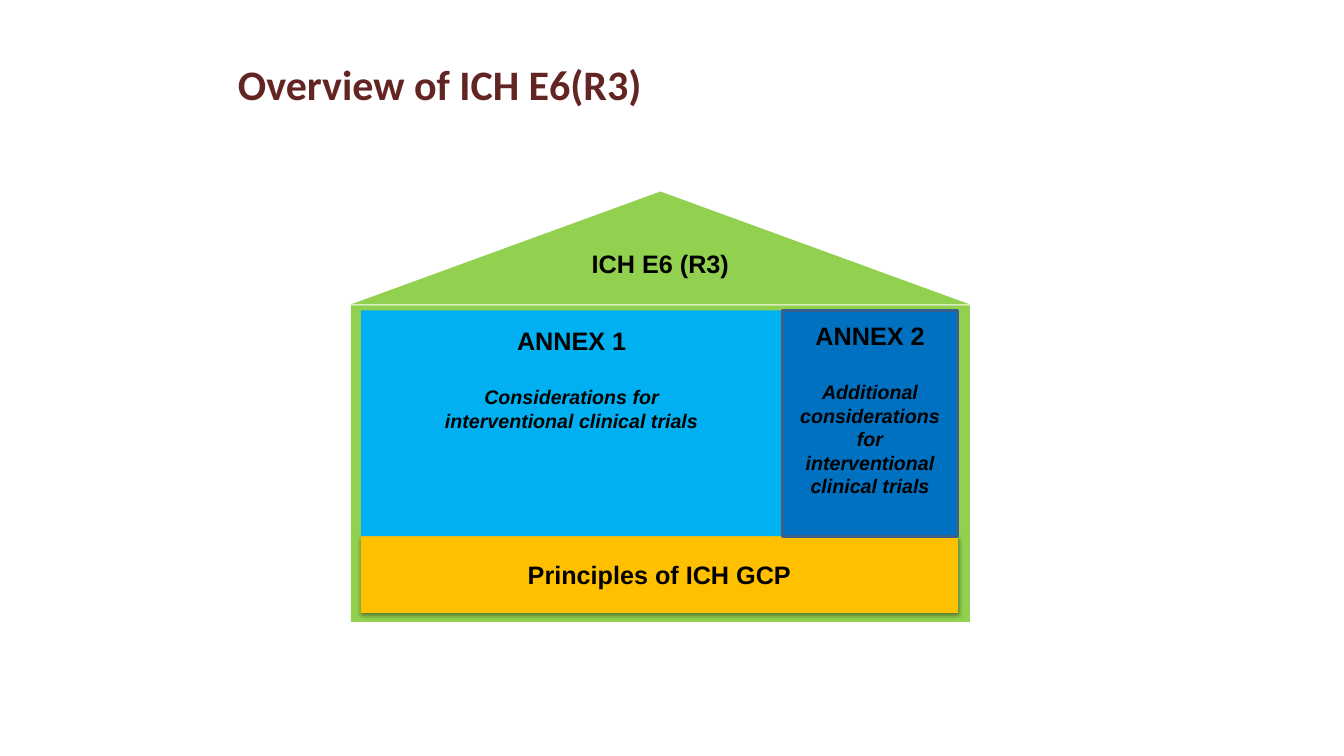
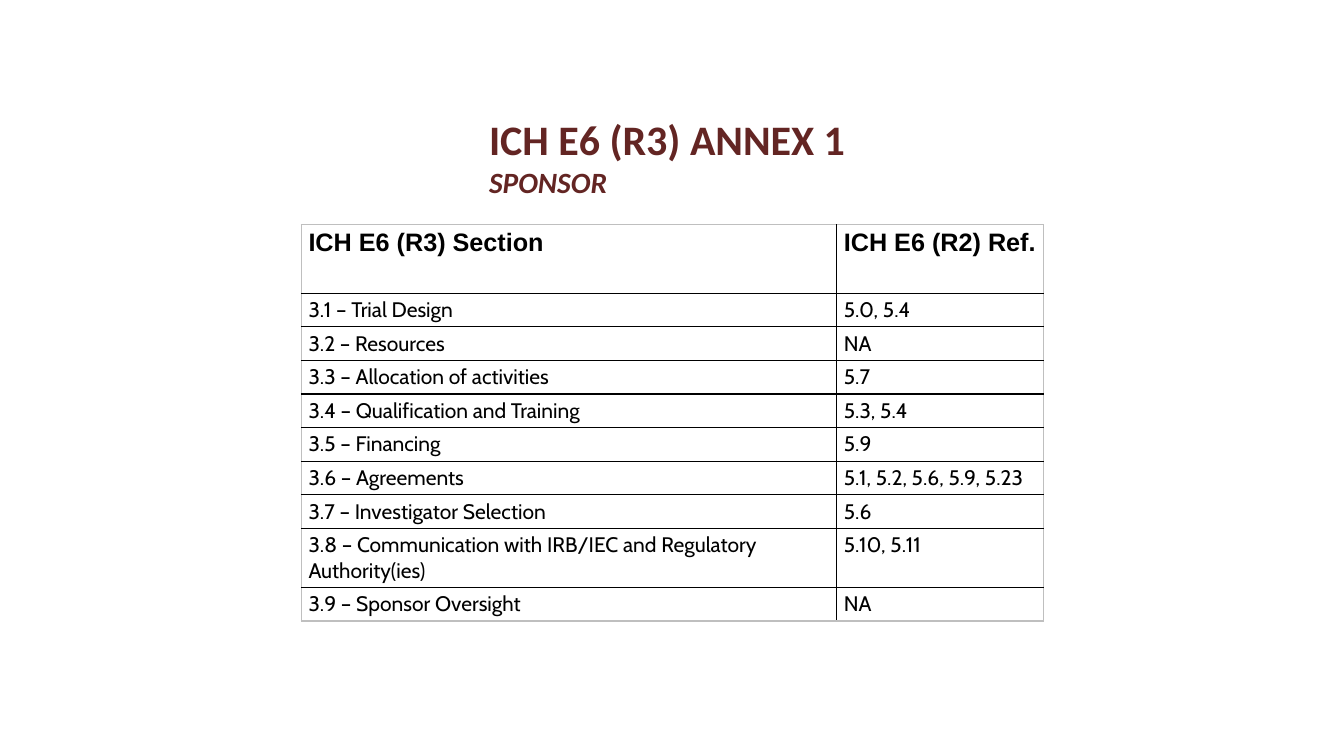
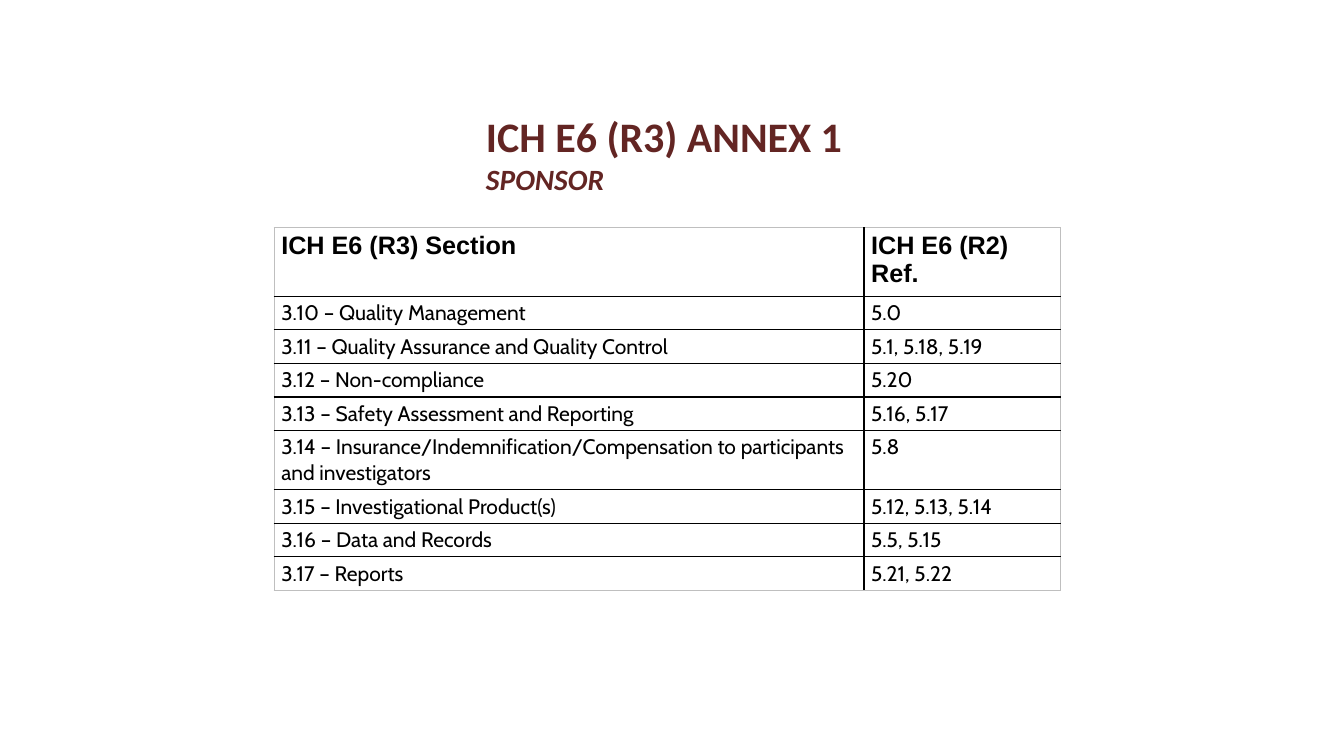
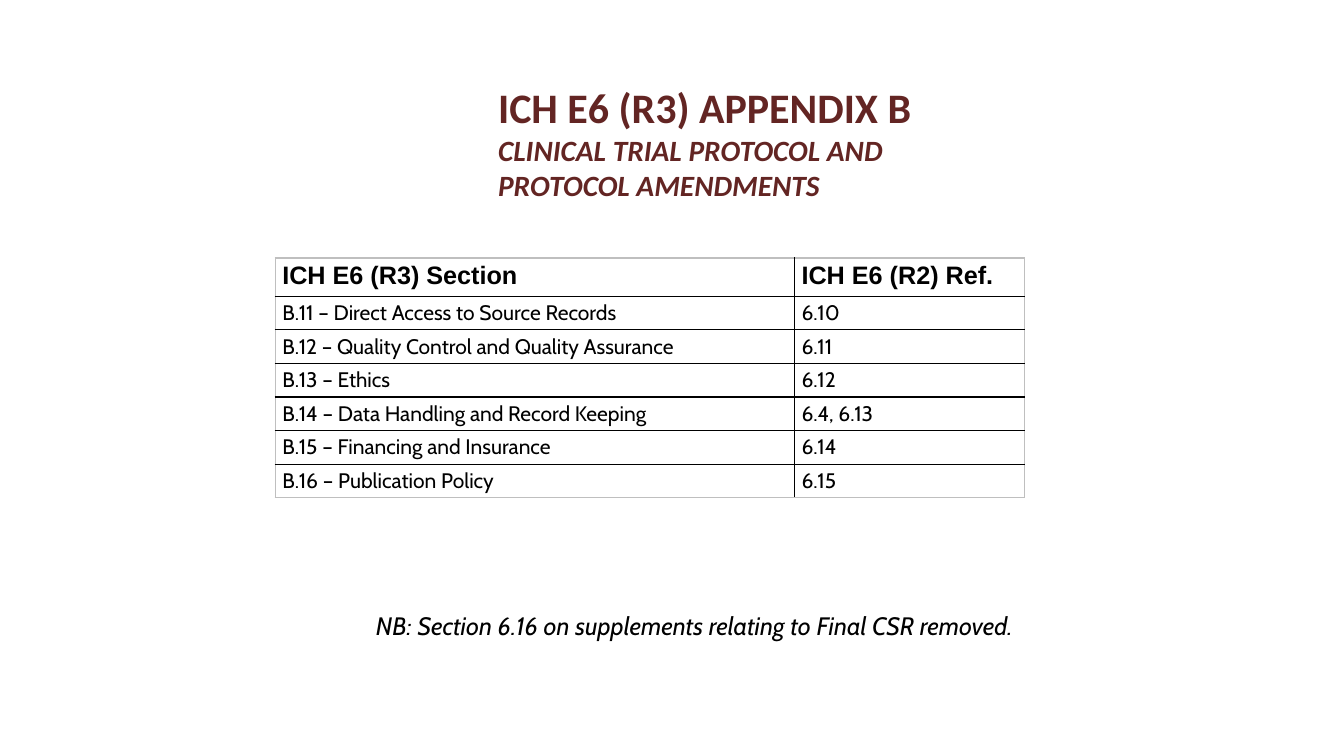
import pptx
import pptx.util
import pptx.dml.color
import pptx.enum.shapes
import pptx.enum.text
import pptx.oxml
import pptx.oxml.ns

Inches, Pt = pptx.util.Inches, pptx.util.Pt
SHAPES = pptx.enum.shapes.MSO_SHAPE
ANCHOR = pptx.enum.text.MSO_ANCHOR
ALIGN = pptx.enum.text.PP_ALIGN
AUTO_SIZE = pptx.enum.text.MSO_AUTO_SIZE

COLORS = {
    "title": "632523", "text": "000000", "house": "92D050",
    "principles": "FFC000", "annex 1": "00B0F0", "annex 2": "0070C0",
    "annex 2 line": "3A5F8C", "outer border": "BFBFBF", "inner border": "000000",
}
FORMATS = {
    "title": {"name": "Calibri", "size": Pt(30), "bold": True, "italic": False},
    "subtitle": {"name": "Calibri", "size": Pt(21), "bold": True, "italic": True},
    "heading": {"name": "Arial", "size": Pt(18), "bold": True, "italic": False},
    "detail": {"name": "Arial", "size": Pt(14), "bold": True, "italic": True},
    "cell": {"name": "Cabin", "size": Pt(15), "bold": False, "italic": False},
    "note": {"name": "Cabin", "size": Pt(18), "bold": False, "italic": True},
}

HEADER = ("ICH E6 (R3) Section", "ICH E6 (R2) Ref.")
LINE_ROW, WRAPPED_ROW = 0.33, 0.57

OVERVIEW = {"title": ["Overview of ICH E6(R3)"], "title box": (2.26, 0.37, 5.1, 0.76)}
TABLE_SLIDES = [
    {
        "title": ["ICH E6 (R3) ANNEX 1", "SPONSOR"],
        "title box": (4.75, 1.09, 4.66, 0.94),
        "corner": (2.99, 2.23), "columns": (5.31, 2.05), "header height": 0.68,
        "rows": [
            ("3.1 – Trial Design", "5.0, 5.4"),
            ("3.2 – Resources", "NA"),
            ("3.3 – Allocation of activities", "5.7"),
            ("3.4 – Qualification and Training", "5.3, 5.4"),
            ("3.5 – Financing", "5.9"),
            ("3.6 – Agreements", "5.1, 5.2, 5.6, 5.9, 5.23"),
            ("3.7 – Investigator Selection", "5.6"),
            ("3.8 – Communication with IRB/IEC and Regulatory Authority(ies)", "5.10, 5.11"),
            ("3.9 – Sponsor Oversight", "NA"),
        ],
    },
    {
        "title": ["ICH E6 (R3) ANNEX 1", "SPONSOR"],
        "title box": (4.72, 1.06, 6.75, 0.94),
        "corner": (2.72, 2.26), "columns": (5.85, 1.95), "header height": 0.68,
        "rows": [
            ("3.10 – Quality Management", "5.0"),
            ("3.11 – Quality Assurance and Quality Control", "5.1, 5.18, 5.19"),
            ("3.12 – Non-compliance", "5.20"),
            ("3.13 – Safety Assessment and Reporting", "5.16, 5.17"),
            ("3.14 – Insurance/Indemnification/Compensation to participants and investigators",
             "5.8"),
            ("3.15 – Investigational Product(s)", "5.12, 5.13, 5.14"),
            ("3.16 – Data and Records", "5.5, 5.15"),
            ("3.17 – Reports", "5.21, 5.22"),
        ],
    },
    {
        "title": ["ICH E6 (R3) APPENDIX B", "CLINICAL TRIAL PROTOCOL AND",
                  "PROTOCOL AMENDMENTS"],
        "title box": (4.84, 1.12, 6.2, 0.94),
        "corner": (2.73, 2.56), "columns": (5.15, 2.28), "header height": 0.38,
        "rows": [
            ("B.11 – Direct Access to Source Records", "6.10"),
            ("B.12 – Quality Control and Quality Assurance", "6.11"),
            ("B.13 – Ethics", "6.12"),
            ("B.14 – Data Handling and Record Keeping", "6.4, 6.13"),
            ("B.15 – Financing and Insurance", "6.14"),
            ("B.16 – Publication Policy", "6.15"),
        ],
        "note": "NB: Section 6.16 on supplements relating to Final CSR removed.",
    },
]

# The house: a frame under a roof, holding two annexes above the principles
HOUSE_LEFT, HOUSE_WIDTH = 3.48, 6.14
ROOF_TOP, ROOF_HEIGHT = 1.9, 1.12
FRAME_TOP, FRAME_HEIGHT = 3.03, 3.14
ROOM_LEFT, ROOM_TOP, ROOM_HEIGHT = 3.58, 3.08, 2.24
ANNEX_WIDTHS = (4.18, 1.74)
PRINCIPLES_HEIGHT = 0.76
HOUSE_PARTS = [
    {"kind": SHAPES.RECTANGLE, "fill": "house",
     "box": (HOUSE_LEFT, FRAME_TOP, HOUSE_WIDTH, FRAME_HEIGHT)},
    {"kind": SHAPES.ISOSCELES_TRIANGLE, "fill": "house",
     "box": (HOUSE_LEFT, ROOF_TOP, HOUSE_WIDTH, ROOF_HEIGHT),
     "text": [("ICH E6 (R3)", "heading")], "top inset": 0},
    {"kind": SHAPES.RECTANGLE, "fill": "principles", "shadow": True,
     "box": (ROOM_LEFT, ROOM_TOP + ROOM_HEIGHT, sum(ANNEX_WIDTHS), PRINCIPLES_HEIGHT),
     "text": [("Principles of ICH GCP", "heading")]},
    {"kind": SHAPES.RECTANGLE, "fill": "annex 1",
     "box": (ROOM_LEFT, ROOM_TOP, ANNEX_WIDTHS[0], ROOM_HEIGHT), "top inset": 0.15,
     "text": [("ANNEX 1", "heading"), ("Considerations for", "detail"),
              ("interventional clinical trials", "detail")]},
    {"kind": SHAPES.RECTANGLE, "fill": "annex 2", "line": "annex 2 line",
     "box": (ROOM_LEFT + ANNEX_WIDTHS[0], ROOM_TOP, ANNEX_WIDTHS[1], ROOM_HEIGHT),
     "top inset": 0.1,
     "text": [("ANNEX 2", "heading"),
              ("Additional considerations for interventional clinical trials", "detail")]},
]


def color(name):
    return pptx.dml.color.RGBColor.from_string(COLORS[name])


def inches(values):
    return [Inches(value) for value in values]


def write(paragraph, text, style, color_name="text"):
    run = paragraph.add_run()
    run.text = text
    for attribute, value in FORMATS[style].items():
        setattr(run.font, attribute, value)
    run.font.color.rgb = color(color_name)


def add_titled_slide(presentation, content):
    slide = presentation.slides.add_slide(presentation.slide_layouts[5])
    title = slide.shapes.title
    title.left, title.top, title.width, title.height = inches(content["title box"])
    frame = title.text_frame
    frame.vertical_anchor = ANCHOR.BOTTOM
    frame.word_wrap = True
    frame.auto_size = AUTO_SIZE.NONE
    paragraph = frame.paragraphs[0]
    paragraph.alignment = ALIGN.LEFT
    for index, line in enumerate(content["title"]):
        if index:
            paragraph.add_line_break()
        write(paragraph, line, "subtitle" if index else "title", "title")
    return slide


def add_soft_shadow(shape):
    effects = shape._element.spPr.find(pptx.oxml.ns.qn("a:effectLst"))
    effects.append(pptx.oxml.parse_xml(
        f'<a:outerShdw {pptx.oxml.ns.nsdecls("a")} blurRad="{Pt(3.1)}" dist="{Pt(1.6)}" '
        'dir="5400000" rotWithShape="0"><a:srgbClr val="000000">'
        '<a:alpha val="38000"/></a:srgbClr></a:outerShdw>'))


def add_house_part(slide, part):
    shape = slide.shapes.add_shape(part["kind"], *inches(part["box"]))
    shape.shadow.inherit = False
    shape.fill.solid()
    shape.fill.fore_color.rgb = color(part["fill"])
    if "line" in part:
        shape.line.color.rgb = color(part["line"])
        shape.line.width = Pt(2)
    else:
        shape.line.fill.background()
    if "shadow" in part:
        add_soft_shadow(shape)
    frame = shape.text_frame
    frame.word_wrap = True
    frame.vertical_anchor = ANCHOR.MIDDLE
    if "top inset" in part:
        frame.vertical_anchor = ANCHOR.TOP
        frame.margin_top = Inches(part["top inset"])
    for index, (text, style) in enumerate(part.get("text", [])):
        paragraph = frame.add_paragraph() if index else frame.paragraphs[0]
        paragraph.alignment = ALIGN.CENTER
        if index == 1:
            paragraph.space_before = Pt(21)
        write(paragraph, text, style)


def set_borders(cell, outer_sides):
    """Draw all four cell borders, with the table's outer sides in grey."""
    properties = cell._tc.get_or_add_tcPr()
    for side in "LRTB":
        name = "outer border" if side in outer_sides else "inner border"
        properties.append(pptx.oxml.parse_xml(
            f'<a:ln{side} {pptx.oxml.ns.nsdecls("a")} w="{Pt(1)}"><a:solidFill>'
            f'<a:srgbClr val="{COLORS[name]}"/></a:solidFill></a:ln{side}>'))


def add_reference_table(slide, content):
    rows = [HEADER] + content["rows"]
    columns = content["columns"]
    # Only the longest section names take two lines
    heights = [content["header height"]] + [
        WRAPPED_ROW if len(section) > 60 else LINE_ROW for section, _ in content["rows"]]
    box = inches((*content["corner"], sum(columns), sum(heights)))
    table = slide.shapes.add_table(len(rows), len(columns), *box).table
    table.first_row = table.horz_banding = False
    for column, width in zip(table.columns, columns):
        column.width = Inches(width)
    for row_index, (texts, height) in enumerate(zip(rows, heights)):
        table.rows[row_index].height = Inches(height)
        for column_index, text in enumerate(texts):
            cell = table.cell(row_index, column_index)
            edges = {"L": column_index == 0, "R": column_index == len(columns) - 1,
                     "T": row_index == 0, "B": row_index == len(rows) - 1}
            set_borders(cell, [side for side, is_outer in edges.items() if is_outer])
            cell.fill.background()
            cell.margin_left = cell.margin_right = Inches(0.07)
            cell.margin_top = cell.margin_bottom = Inches(0.04)
            write(cell.text_frame.paragraphs[0], text, "cell" if row_index else "heading")


def add_note(slide, text):
    frame = slide.shapes.add_textbox(*inches((3.63, 6.01, 6.68, 0.4))).text_frame
    frame.word_wrap = False
    frame.auto_size = AUTO_SIZE.SHAPE_TO_FIT_TEXT
    write(frame.paragraphs[0], text, "note")


def main():
    presentation = pptx.Presentation()
    presentation.slide_width, presentation.slide_height = inches((13.33, 7.5))
    slide = add_titled_slide(presentation, OVERVIEW)
    for part in HOUSE_PARTS:
        add_house_part(slide, part)
    for content in TABLE_SLIDES:
        slide = add_titled_slide(presentation, content)
        add_reference_table(slide, content)
        if "note" in content:
            add_note(slide, content["note"])
    presentation.save("out.pptx")


if __name__ == "__main__":
    main()
